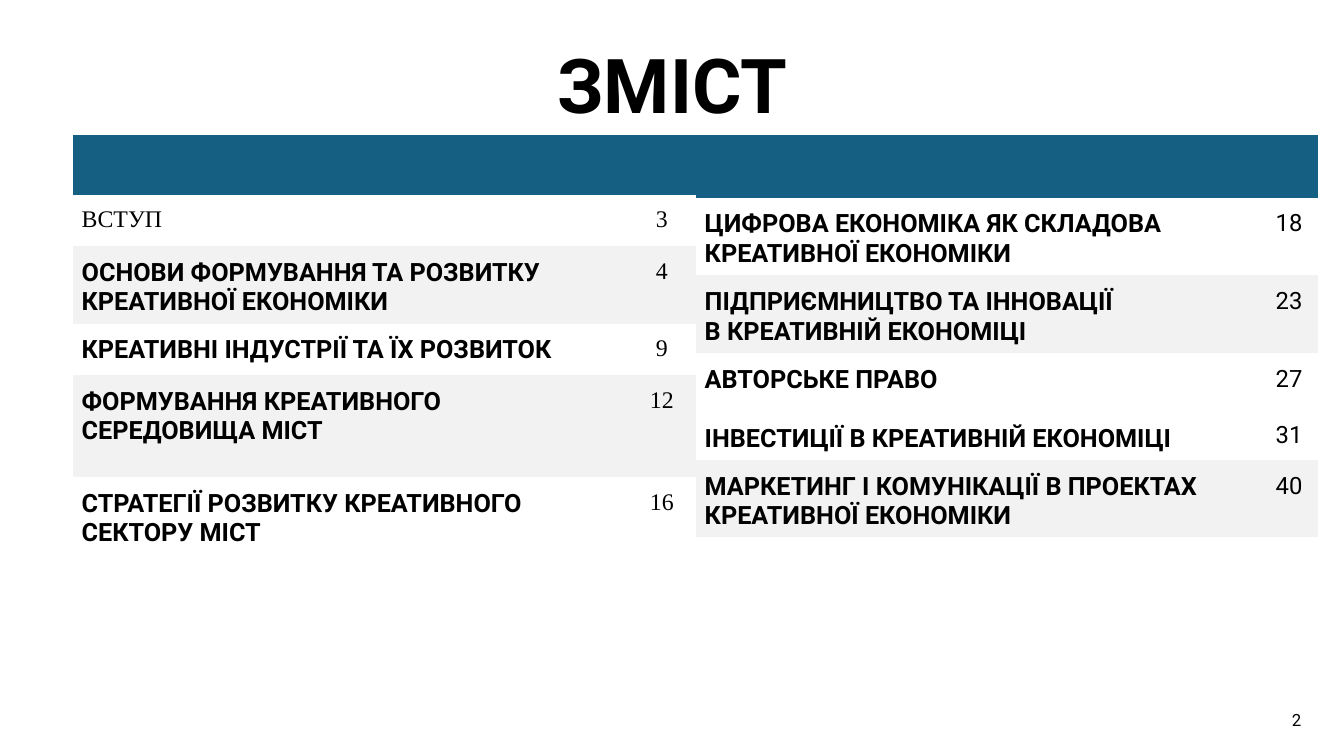
from pptx import Presentation
from pptx.dml.color import RGBColor
from pptx.enum.text import MSO_ANCHOR, PP_ALIGN
from pptx.util import Inches, Pt

BLACK = RGBColor(0x00, 0x00, 0x00)
TEAL = RGBColor(0x15, 0x60, 0x82)
GRAY = RGBColor(0xF2, 0xF2, 0xF2)
SANS, SERIF = "Roboto", "Times New Roman"
PLAIN_STYLE = "{2D5ABB26-0587-4C30-8999-92F81FD0307C}"  # no style, no grid

# Each entry: heading lines, page numbers
LEFT_ENTRIES = [
    (["ВСТУП"], ["3"]),
    (["ОСНОВИ ФОРМУВАННЯ ТА РОЗВИТКУ КРЕАТИВНОЇ ЕКОНОМІКИ"], ["4"]),
    (["КРЕАТИВНІ ІНДУСТРІЇ ТА ЇХ РОЗВИТОК"], ["9"]),
    (["ФОРМУВАННЯ КРЕАТИВНОГО СЕРЕДОВИЩА МІСТ"], ["12"]),
    (["СТРАТЕГІЇ РОЗВИТКУ КРЕАТИВНОГО СЕКТОРУ МІСТ"], ["16"]),
]
RIGHT_ENTRIES = [
    (["ЦИФРОВА ЕКОНОМІКА ЯК СКЛАДОВА КРЕАТИВНОЇ ЕКОНОМІКИ"], ["18"]),
    (["ПІДПРИЄМНИЦТВО ТА ІННОВАЦІЇ", "В КРЕАТИВНІЙ ЕКОНОМІЦІ"], ["23"]),
    (["АВТОРСЬКЕ ПРАВО", "ІНВЕСТИЦІЇ В КРЕАТИВНІЙ ЕКОНОМІЦІ"], ["27", "31"]),
    (["МАРКЕТИНГ І КОМУНІКАЦІЇ В ПРОЕКТАХ КРЕАТИВНОЇ ЕКОНОМІКИ"], ["40"]),
    ([], []),
]


def format_run(p, size, font=SANS, bold=False):
    for r in p.runs:
        r.font.size = Pt(size)
        r.font.name = font
        r.font.bold = bold
        r.font.color.rgb = BLACK


def add_title(s, text):
    title = s.shapes.title
    title.left, title.top = Inches(0.92), Inches(0.32)
    title.width, title.height = Inches(11.5), Inches(1.02)
    tf = title.text_frame
    tf.text = text
    tf.vertical_anchor = MSO_ANCHOR.BOTTOM
    p = tf.paragraphs[0]
    p.alignment = PP_ALIGN.CENTER
    p.line_spacing = 0.9
    p.space_after = Pt(6)
    format_run(p, 54, bold=True)


def add_page_number(s, text):
    box = s.shapes.add_textbox(Inches(12.54), Inches(6.99), Inches(0.64), Inches(0.3))
    tf = box.text_frame
    tf.word_wrap = True
    tf.text = text
    tf.paragraphs[0].alignment = PP_ALIGN.CENTER
    format_run(tf.paragraphs[0], 12)


def fill_cell(cell, lines, size, font, bold, align, gap):
    cell.margin_left = cell.margin_right = Inches(0.09)
    cell.margin_top, cell.margin_bottom = Inches(0.12), Inches(0.05)
    tf = cell.text_frame
    tf.text = "\n".join(lines)
    for i, p in enumerate(tf.paragraphs):
        p.alignment = align
        if i and gap:
            p.space_before = Pt(gap)
        format_run(p, size, font, bold)


def add_contents(s, left, widths, heights, entries, page_font):
    frame = s.shapes.add_table(len(heights), 2, Inches(left), Inches(1.34),
                               Inches(sum(widths)), Inches(sum(heights)))
    table = frame.table
    frame._element.graphic.graphicData.tbl.tblPr.find(
        "{http://schemas.openxmlformats.org/drawingml/2006/main}tableStyleId").text = PLAIN_STYLE
    for column, width in zip(table.columns, widths):
        column.width = Inches(width)
    for row, height in zip(table.rows, heights):
        row.height = Inches(height)

    # Header band
    header = table.cell(0, 0)
    header.merge(table.cell(0, 1))
    header.fill.solid()
    header.fill.fore_color.rgb = TEAL

    # Entries, every second one shaded
    for i, (heading, pages) in enumerate(entries, start=1):
        for cell in table.rows[i].cells:
            if i % 2 == 0 and heading:
                cell.fill.solid()
                cell.fill.fore_color.rgb = GRAY
            else:
                cell.fill.background()
        if not heading:
            continue
        intro = heading == ["ВСТУП"]
        two_topics = len(pages) > 1
        fill_cell(table.cell(i, 0), heading, 17 if intro else 18,
                  SERIF if intro else SANS, not intro, PP_ALIGN.LEFT,
                  21 if two_topics else 0)
        fill_cell(table.cell(i, 1), pages, 17, page_font, False,
                  PP_ALIGN.CENTER, 20 if two_topics else 0)


def main():
    prs = Presentation()
    prs.slide_width, prs.slide_height = Inches(13.33), Inches(7.5)
    s = prs.slides.add_slide(prs.slide_layouts[5])
    add_page_number(s, "2")
    add_title(s, "ЗМІСТ")
    add_contents(s, 0.72, [5.51, 0.67], [0.59, 0.51, 0.51, 0.51, 1.01, 0.73],
                 LEFT_ENTRIES, SERIF)
    add_contents(s, 6.9, [5.6, 0.57], [0.62, 0.51, 0.52, 0.51, 0.51, 0.51],
                 RIGHT_ENTRIES, SANS)
    prs.save("out.pptx")


if __name__ == "__main__":
    main()
